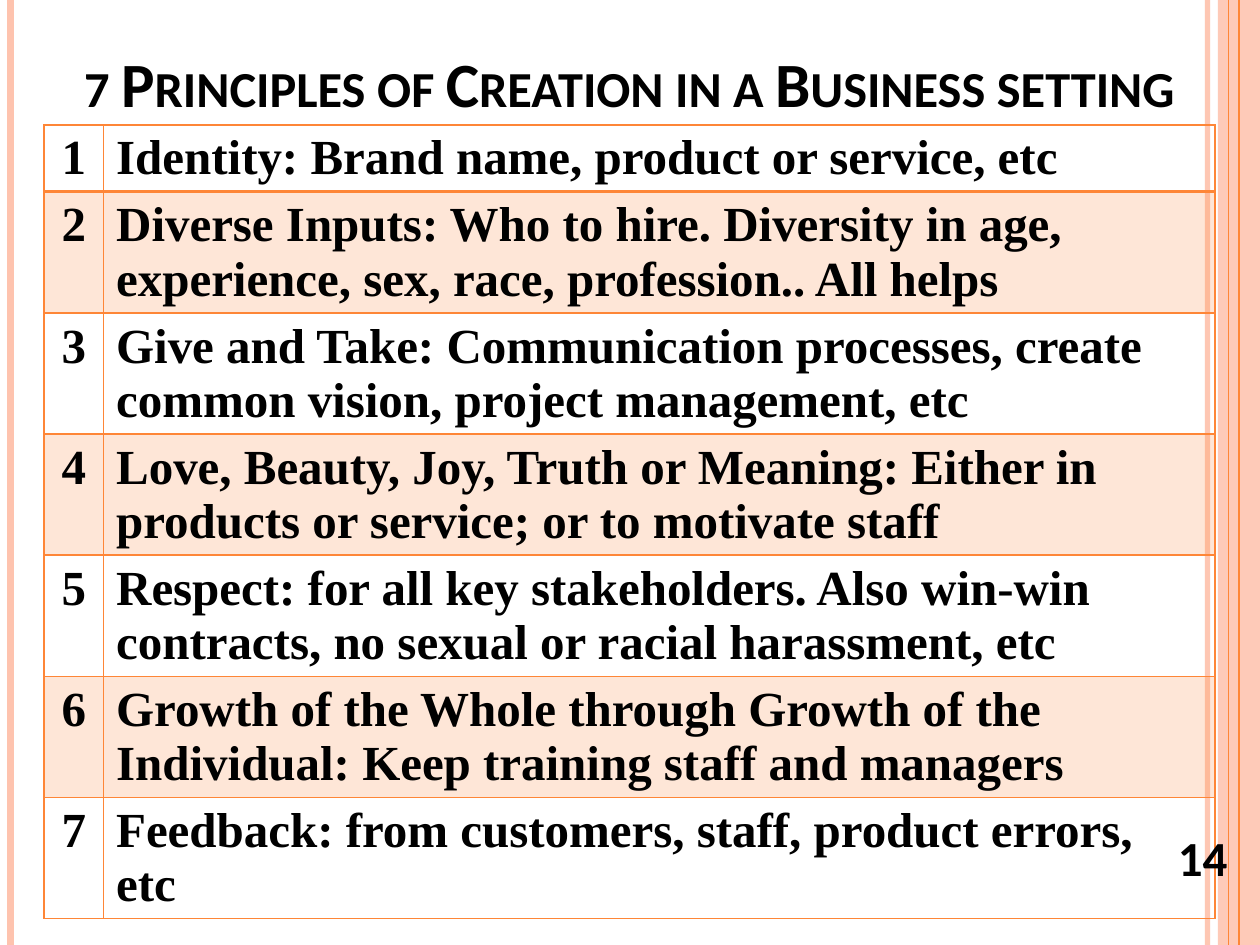
import pptx
import pptx.dml.color
import pptx.enum.shapes
import pptx.enum.text
import pptx.oxml
import pptx.oxml.ns
import pptx.util

Pt = pptx.util.Pt
Align = pptx.enum.text.PP_ALIGN
Anchor = pptx.enum.text.MSO_ANCHOR
ORANGE = "FE8637"
PEACH = "FEC3AE"


def paint(color_format, color, opacity=100):
    color_format.rgb = pptx.dml.color.RGBColor.from_string(color)
    if opacity < 100:
        for node in color_format._xFill.iter(pptx.oxml.ns.qn("a:srgbClr")):
            alpha = node.makeelement(pptx.oxml.ns.qn("a:alpha"), {"val": str(opacity * 1000)})
            node.append(alpha)


def write(frame, text, font_name, size, align):
    para = frame.paragraphs[0]
    para.alignment = align
    span = para.add_run()
    span.text = text
    span.font.name = font_name
    span.font.size = Pt(size)
    span.font.bold = True
    paint(span.font.color, "000000")
    return span


deck = pptx.Presentation()
deck.slide_width, deck.slide_height = Pt(720), Pt(540)
slide = deck.slides.add_slide(deck.slide_layouts[5])

band = slide.shapes.add_shape(pptx.enum.shapes.MSO_SHAPE.RECTANGLE, Pt(696), Pt(0), Pt(24), Pt(540))
band.shadow.inherit = False
band.fill.solid()
paint(band.fill.fore_color, PEACH, 87)
band.line.fill.background()

for x, color, width, opacity in [
    (690, PEACH, 3, 93),
    (6, PEACH, 4.5, 100),
    (708, ORANGE, 1.5, 100),
    (702, ORANGE, 0.75, 100),
]:
    stripe = slide.shapes.add_connector(
        pptx.enum.shapes.MSO_CONNECTOR.STRAIGHT, Pt(x), Pt(0), Pt(x), Pt(540))
    stripe.line.width = Pt(width)
    stripe.line.fill.solid()
    paint(stripe.line.fill.fore_color, color, opacity)
    properties = stripe._element.spPr
    properties.append(properties.makeelement(pptx.oxml.ns.qn("a:effectLst"), {}))

title = slide.shapes.title
title.left, title.top, title.width, title.height = Pt(25.2), Pt(15), Pt(669), Pt(57)
title.text_frame.word_wrap = True
title.text_frame.auto_size = pptx.enum.text.MSO_AUTO_SIZE.NONE
title.text_frame.vertical_anchor = Anchor.BOTTOM
heading = write(title.text_frame, "7 Principles of Creation in a Business setting",
                "Calibri", 36, Align.CENTER)
heading._r.get_or_add_rPr().set("cap", "small")

principles = [
    "Identity: Brand name, product or service, etc",
    "Diverse Inputs: Who to hire. Diversity in age, experience, sex, race, profession.. All helps",
    "Give and Take: Communication processes, create common vision, project management, etc",
    "Love, Beauty, Joy, Truth or Meaning: Either in products or service; or to motivate staff",
    "Respect: for all key stakeholders. Also win-win contracts, no sexual or racial harassment, etc",
    "Growth of the Whole through Growth of the Individual: Keep training staff and managers",
    "Feedback: from customers, staff, product errors, etc",
]
table = slide.shapes.add_table(
    len(principles), 2, Pt(25.2), Pt(71.3), Pt(669), Pt(453)).table
table.first_row = False
table.horz_banding = False
table.columns[0].width, table.columns[1].width = Pt(34), Pt(635)

for index, principle in enumerate(principles):
    table.rows[index].height = Pt(38.4 if index == 0 else 69.1)
    for column, (text, align) in enumerate([(str(index + 1), Align.CENTER), (principle, Align.LEFT)]):
        cell = table.cell(index, column)
        write(cell.text_frame, text, "Times New Roman", 28, align)
        cell_properties = cell._tc.get_or_add_tcPr()
        for side in "LRTB":
            thick = (index, side) in [(0, "B"), (1, "T")]
            cell_properties.append(pptx.oxml.parse_xml(
                f'<a:ln{side} {pptx.oxml.ns.nsdecls("a")} w="{Pt(2 if thick else 1)}">'
                f'<a:solidFill><a:srgbClr val="{ORANGE}"/></a:solidFill></a:ln{side}>'))
        if index % 2:
            cell.fill.solid()
            paint(cell.fill.fore_color, ORANGE, 20)
        else:
            cell.fill.background()

number_box = slide.shapes.add_textbox(Pt(654.5), Pt(469), Pt(65.5), Pt(41))
number_box.text_frame.word_wrap = True
number_box.text_frame.vertical_anchor = Anchor.MIDDLE
write(number_box.text_frame, "14", "Calibri", 28, Align.CENTER)

deck.save("out.pptx")
